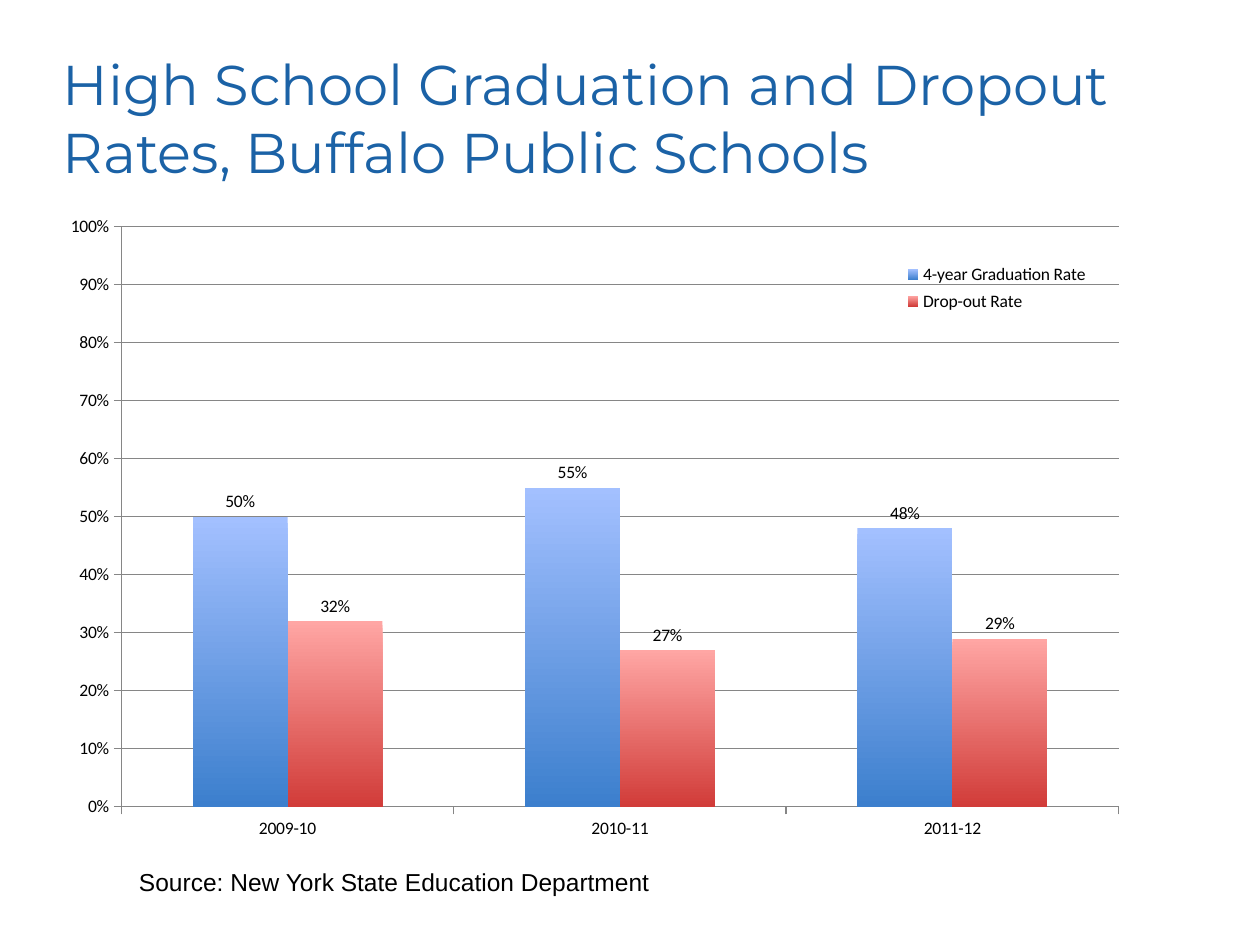
from dataclasses import dataclass

from lxml import etree
from pptx import Presentation
from pptx.chart.data import CategoryChartData
from pptx.dml.color import RGBColor
from pptx.enum.chart import XL_CHART_TYPE, XL_LABEL_POSITION, XL_LEGEND_POSITION, XL_TICK_MARK
from pptx.enum.text import MSO_ANCHOR
from pptx.oxml import parse_xml
from pptx.oxml.ns import nsdecls, qn
from pptx.util import Emu, Pt

COLUMNS = XL_CHART_TYPE.COLUMN_CLUSTERED
OUTSIDE_END = XL_LABEL_POSITION.OUTSIDE_END
LEGEND_RIGHT = XL_LEGEND_POSITION.RIGHT
TICK_OUTSIDE = XL_TICK_MARK.OUTSIDE
TOP, MIDDLE = MSO_ANCHOR.TOP, MSO_ANCHOR.MIDDLE

PIXELS_PER_INCH = 126
PERCENT = "0%"
YEARS = ["2009-10", "2010-11", "2011-12"]
RATES = {
    "4-year Graduation Rate": (0.50, 0.55, 0.48),
    "Drop-out Rate": (0.32, 0.27, 0.29),
}


@dataclass(frozen=True)
class TextStyle:
    font: str
    size: int
    color: str


@dataclass(frozen=True)
class Theme:
    title: TextStyle = TextStyle("Montserrat", 32, "1B62A6")
    source: TextStyle = TextStyle("Arial", 14, "000000")
    chart: TextStyle = TextStyle("Calibri", 10, "000000")
    lines: str = "868686"
    gradients: tuple = (("A3C0FF", "3C7FCD"), ("FFA6A4", "D13C39"))


THEME = Theme()


def px(length):
    return Emu(round(length * 914400 / PIXELS_PER_INCH))


def style_font(font, style):
    font.name = style.font
    font.size = Pt(style.size)
    font.color.rgb = RGBColor.from_string(style.color)


def add_text(slide, text, box, style, anchor=TOP, insets=(0, 0)):
    """Add a wrapped text box; insets are horizontal and vertical."""
    frame = slide.shapes.add_textbox(*map(px, box)).text_frame
    frame.word_wrap = True
    frame.vertical_anchor = anchor
    frame.margin_left = frame.margin_right = px(insets[0])
    frame.margin_top = frame.margin_bottom = px(insets[1])
    frame.text = text
    style_font(frame.paragraphs[0].runs[0].font, style)


def set_layout(element, fractions, inner=False):
    """Place a chart part by fractions (x, y, w, h) of the chart area."""
    for old_layout in element.findall(qn("c:layout")):
        element.remove(old_layout)
    layout = parse_xml(f"<c:layout {nsdecls('c')}><c:manualLayout/></c:layout>")
    settings = [("layoutTarget", "inner")] if inner else []
    settings += [("xMode", "edge"), ("yMode", "edge")]
    settings += zip("xywh", map(str, fractions))
    for name, value in settings:
        etree.SubElement(layout[0], qn(f"c:{name}")).set("val", value)
    if inner:
        element.insert(0, layout)
    else:
        element.find(qn("c:legendPos")).addnext(layout)


def style_line(line):
    line.color.rgb = RGBColor.from_string(THEME.lines)
    line.width = Pt(0.75)


def style_axes(chart):
    for axis in (chart.category_axis, chart.value_axis):
        axis.major_tick_mark = TICK_OUTSIDE
        style_line(axis.format.line)
    values = chart.value_axis
    values.minimum_scale, values.maximum_scale, values.major_unit = 0, 1, 0.1
    values.tick_labels.number_format = PERCENT
    values.tick_labels.number_format_is_linked = False
    values.has_major_gridlines = True
    style_line(values.major_gridlines.format.line)


def style_series(series, colors):
    fill = series.format.fill
    fill.gradient()
    fill.gradient_angle = 270
    for stop, color in zip(fill.gradient_stops, colors):
        stop.color.rgb = RGBColor.from_string(color)
    series.format.line.fill.background()
    labels = series.data_labels
    labels.show_value = True
    labels.number_format = PERCENT
    labels.number_format_is_linked = False
    labels.position = OUTSIDE_END


def add_rate_chart(slide, box):
    data = CategoryChartData(number_format=PERCENT)
    data.categories = YEARS
    for name, values in RATES.items():
        data.add_series(name, values)
    chart = slide.shapes.add_chart(COLUMNS, *map(px, box), data).chart
    chart.has_title = False
    style_font(chart.font, THEME.chart)
    style_axes(chart)

    plot = chart.plots[0]
    plot.gap_width = 150
    plot.overlap = 0
    plot.vary_by_categories = False
    for series, colors in zip(plot.series, THEME.gradients):
        style_series(series, colors)

    chart.has_legend = True
    chart.legend.position = LEGEND_RIGHT
    chart.legend.include_in_layout = False
    plot_area = chart.element.find(".//" + qn("c:plotArea"))
    set_layout(plot_area, (0.055, 0.036, 0.94, 0.915), inner=True)
    set_layout(chart.element.find(".//" + qn("c:legend")), (0.78, 0.085, 0.2, 0.095))


def main():
    presentation = Presentation()
    presentation.slide_width, presentation.slide_height = px(1260), px(945)
    slide = presentation.slides.add_slide(presentation.slide_layouts[6])
    add_text(slide, "High School Graduation and Dropout Rates, Buffalo Public Schools",
             (63, 38, 1134, 158), THEME.title, anchor=MIDDLE)
    add_rate_chart(slide, (63, 204, 1061, 635))
    add_text(slide, "Source: New York State Education Department",
             (126, 861, 840, 43), THEME.source, insets=(13, 6))
    presentation.save("out.pptx")


if __name__ == "__main__":
    main()
